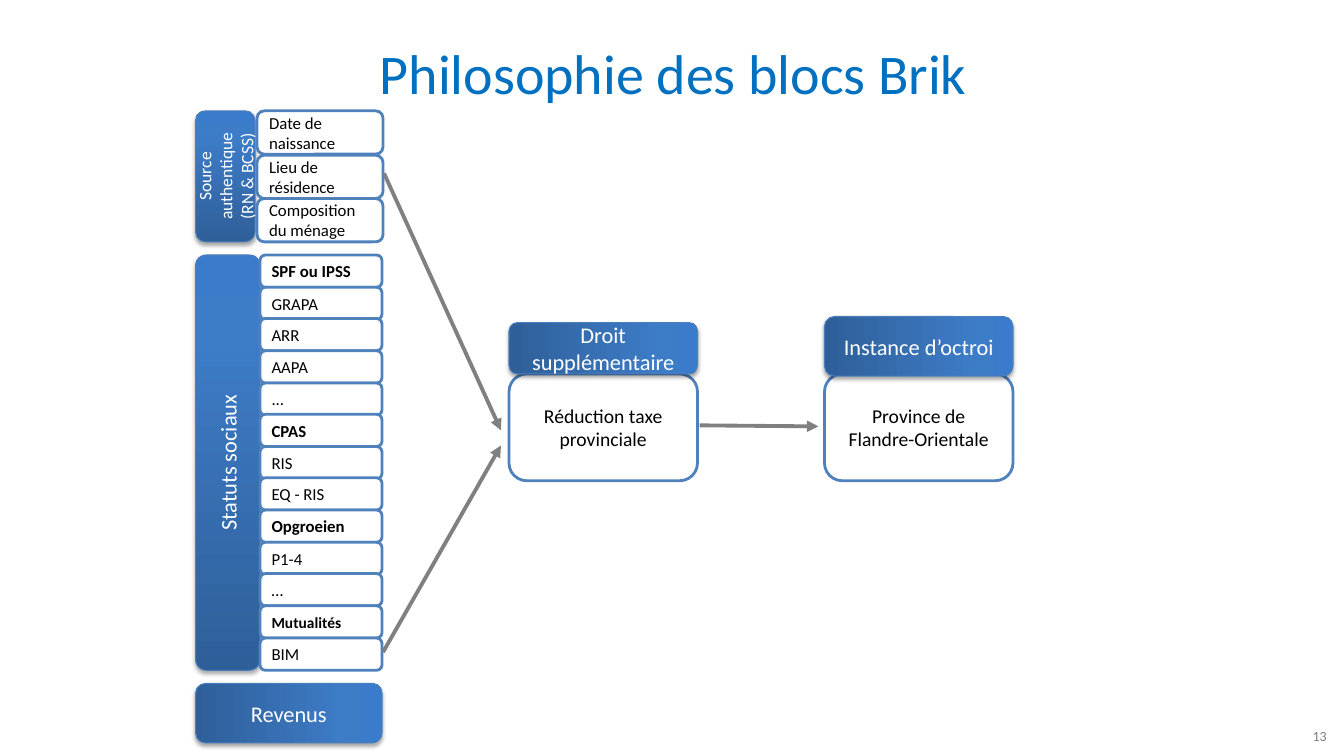
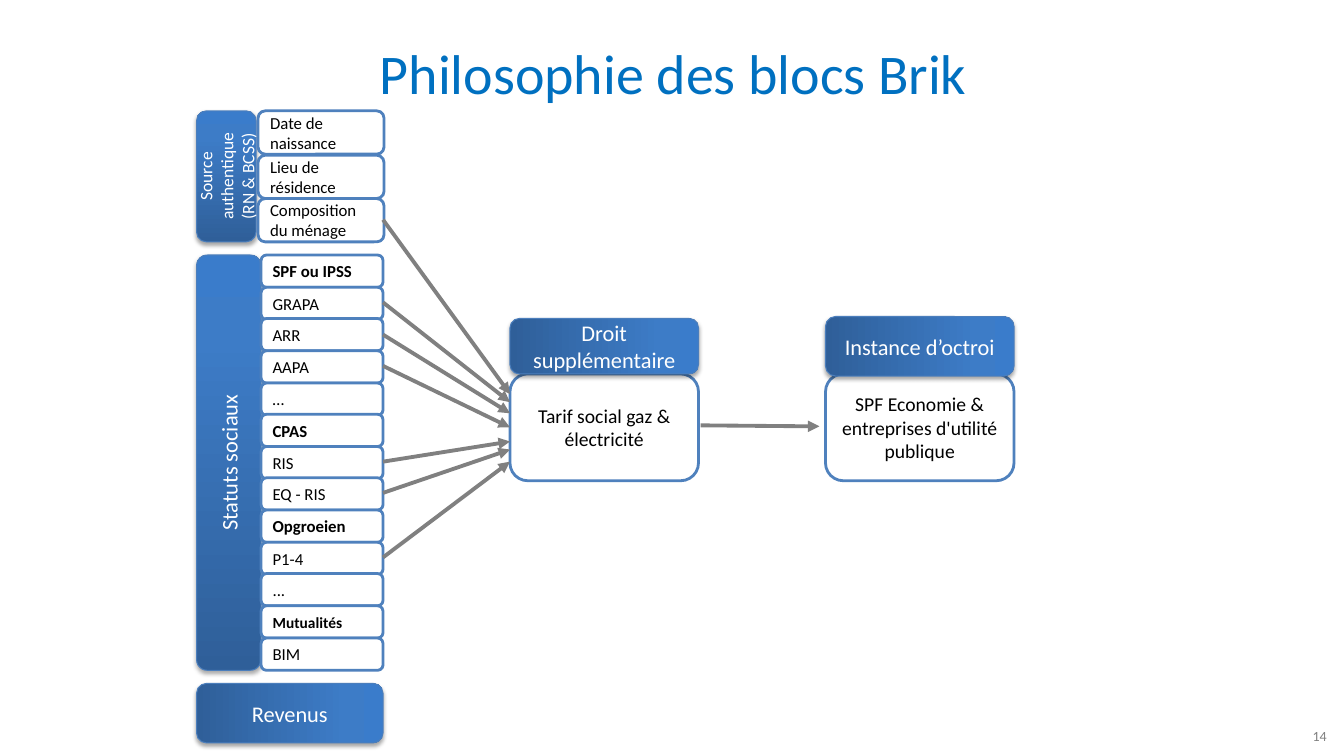
"""Build two slides that link source data, social statuses and derived rights."""
from dataclasses import dataclass
from typing import NamedTuple

from lxml.etree import SubElement
from pptx import Presentation
from pptx.dml.color import RGBColor
from pptx.enum.shapes import MSO_CONNECTOR as Connector, MSO_SHAPE as Shape
from pptx.enum.text import MSO_ANCHOR as Anchor, MSO_AUTO_SIZE as AutoSize, PP_ALIGN as Align
from pptx.oxml.ns import qn
from pptx.util import Emu, Pt

PX = 9144
FONT = "Calibri"
TITLE_BLUE, EDGE_BLUE, BAR_EDGE = "0070C0", "4F81BD", "4B7EBC"
WHITE, BLACK, GRAY = "FFFFFF", "000000", "808080"
GRADIENT = ((0, "2F5F99"), (80, "3D7CC7"), (100, "3A7CCB"))
TITLE = "Philosophie des blocs Brik"
SOURCES = ("Date de naissance", "Lieu de résidence", "Composition du ménage")
HEADINGS = {"SPF ou IPSS": 12, "CPAS": 12, "Opgroeien": 12, "Mutualités": 11}


class Area(NamedTuple):
    left: int
    top: int
    width: int
    height: int


class Arrow(NamedTuple):
    x1: int
    y1: int
    x2: int
    y2: int


@dataclass(frozen=True)
class TextStyle:
    size: float
    color: str = BLACK
    align: Align = Align.LEFT
    bold: bool = False


@dataclass(frozen=True)
class BlockPage:
    number: str
    shift: int
    dots: tuple[str, str]
    right_top: int
    right: str
    authority: str
    arrows: tuple[Arrow, ...]


PAGES = (
    BlockPage(
        "13", 0, ("...", "…"), 320, "Réduction taxe provinciale", "Province de Flandre-Orientale",
        (Arrow(381, 172, 497, 427), Arrow(380, 647, 497, 442)),
    ),
    BlockPage(
        "14", 1, ("…", "..."), 316, "Tarif social gaz & électricité",
        "SPF Economie & entreprises d'utilité publique",
        tuple(
            Arrow(380, start, 506, end)
            for start, end in (
                (218, 391), (458, 438), (300, 399), (332, 410), (363, 424), (489, 446), (553, 458),
            )
        ),
    ),
)


def px(value: float) -> Emu:
    """Turn px into EMU."""
    return Emu(round(value * PX))


def rgb(value: str) -> RGBColor:
    """Turn a hex string into a colour."""
    return RGBColor.from_string(value)


def place(shape, area: Area) -> None:
    """Set the position and size of a shape."""
    shape.left, shape.top, shape.width, shape.height = map(px, area)


def write(shape, text: str, style: TextStyle) -> None:
    """Write one styled run, vertically centred."""
    frame = shape.text_frame
    frame.word_wrap = True
    frame.auto_size = AutoSize.NONE
    frame.vertical_anchor = Anchor.MIDDLE
    para = frame.paragraphs[0]
    para.alignment = style.align
    span = para.add_run()
    span.text = text
    span.font.name = FONT
    span.font.size = Pt(style.size)
    span.font.bold = style.bold
    span.font.color.rgb = rgb(style.color)


def add_block(page, area: Area, edge: str, weight: float):
    """Add a rounded block with an outline and no shadow."""
    box = page.shapes.add_shape(Shape.ROUNDED_RECTANGLE, *map(px, area))
    box.shadow.inherit = False
    box.line.color.rgb = rgb(edge)
    box.line.width = Pt(weight)
    return box


def add_card(page, area: Area, text: str, style: TextStyle) -> None:
    """Add a white block."""
    box = add_block(page, area, EDGE_BLUE, 2)
    box.fill.solid()
    box.fill.fore_color.rgb = rgb(WHITE)
    write(box, text, style)


def add_bar(page, area: Area, text: str, size: float = 16, upright: bool = False) -> None:
    """Add a blue gradient block with a soft shadow."""
    box = add_block(page, area, BAR_EDGE, 0.75)
    box.fill.gradient()
    box.fill.gradient_angle = 90 if upright else 0
    properties = box._element.spPr
    stops = properties.find(qn("a:gradFill")).find(qn("a:gsLst"))
    for stop in list(stops):
        stops.remove(stop)
    for position, color in GRADIENT:
        stop = SubElement(stops, qn("a:gs"), pos=str(position * 1000))
        SubElement(stop, qn("a:srgbClr"), val=color)
    shadow = SubElement(
        properties.find(qn("a:effectLst")), qn("a:outerShdw"),
        blurRad=str(Pt(3.1)), dist=str(Pt(1.8)), dir="5400000", rotWithShape="0",
    )
    tint = SubElement(shadow, qn("a:srgbClr"), val=BLACK)
    SubElement(tint, qn("a:alpha"), val="35000")
    write(box, text, TextStyle(size, WHITE, Align.CENTER))
    if upright:
        box.text_frame._txBody.bodyPr.set("vert", "vert270")


def add_arrow(page, arrow: Arrow) -> None:
    """Add a gray arrow."""
    line = page.shapes.add_connector(Connector.STRAIGHT, *map(px, arrow))
    line.line.color.rgb = rgb(GRAY)
    line.line.width = Pt(2.75)
    SubElement(line.line._get_or_add_ln(), qn("a:tailEnd"), type="triangle")
    SubElement(line._element.spPr, qn("a:effectLst"))


def add_inputs(page, content: BlockPage) -> None:
    """Add the left column of sources, statuses and income."""
    left = 194 + content.shift
    add_bar(page, Area(left, 110, 59, 130), "Source authentique (RN & BCSS)", 12.5, True)
    for index, source in enumerate(SOURCES):
        area = Area(left + 61, 110 + round(index * 43.5), 125, 43)
        add_card(page, area, source, TextStyle(12))
    add_bar(page, Area(left, 253, 64, 412), "Statuts sociaux", upright=True)
    statuses = (
        "SPF ou IPSS", "GRAPA", "ARR", "AAPA", content.dots[0], "CPAS", "RIS", "EQ - RIS",
        "Opgroeien", "P1-4", content.dots[1], "Mutualités", "BIM",
    )
    for index, status in enumerate(statuses):
        style = TextStyle(HEADINGS.get(status, 12), bold=status in HEADINGS)
        add_card(page, Area(left + 64, 253 + round(index * 31.63), 121, 32), status, style)
    add_bar(page, Area(left, 678, 185, 59), "Revenus")


def add_outcome(page, left: int, top: int, bottom: int, heading: str, text: str) -> None:
    """Add a card topped by a heading bar."""
    add_card(page, Area(left, 371, 187, 106), text, TextStyle(14, align=Align.CENTER))
    add_bar(page, Area(left, top, 187, bottom - top), heading)


def add_page(deck, content: BlockPage) -> None:
    """Add one complete slide."""
    page = deck.slides.add_slide(deck.slide_layouts[5])
    title = page.shapes.title
    place(title, Area(68, 21, 1200, 101))
    write(title, TITLE, TextStyle(40, TITLE_BLUE, Align.CENTER))
    add_inputs(page, content)
    shift = content.shift
    add_outcome(page, 505 + shift, content.right_top, 371, "Droit supplémentaire", content.right)
    add_outcome(page, 818 + shift, 314, 373, "Instance d’octroi", content.authority)
    for arrow in (*content.arrows, Arrow(694 + shift, 422, 812 + shift, 423)):
        add_arrow(page, arrow)
    number = page.shapes.add_textbox(*map(px, Area(1217, 710, 109, 40)))
    write(number, content.number, TextStyle(10, GRAY, Align.RIGHT))


def main() -> None:
    """Build and save the deck."""
    deck = Presentation()
    deck.slide_width, deck.slide_height = px(1333.33), px(750)
    for content in PAGES:
        add_page(deck, content)
    deck.save("out.pptx")


if __name__ == "__main__":
    main()
